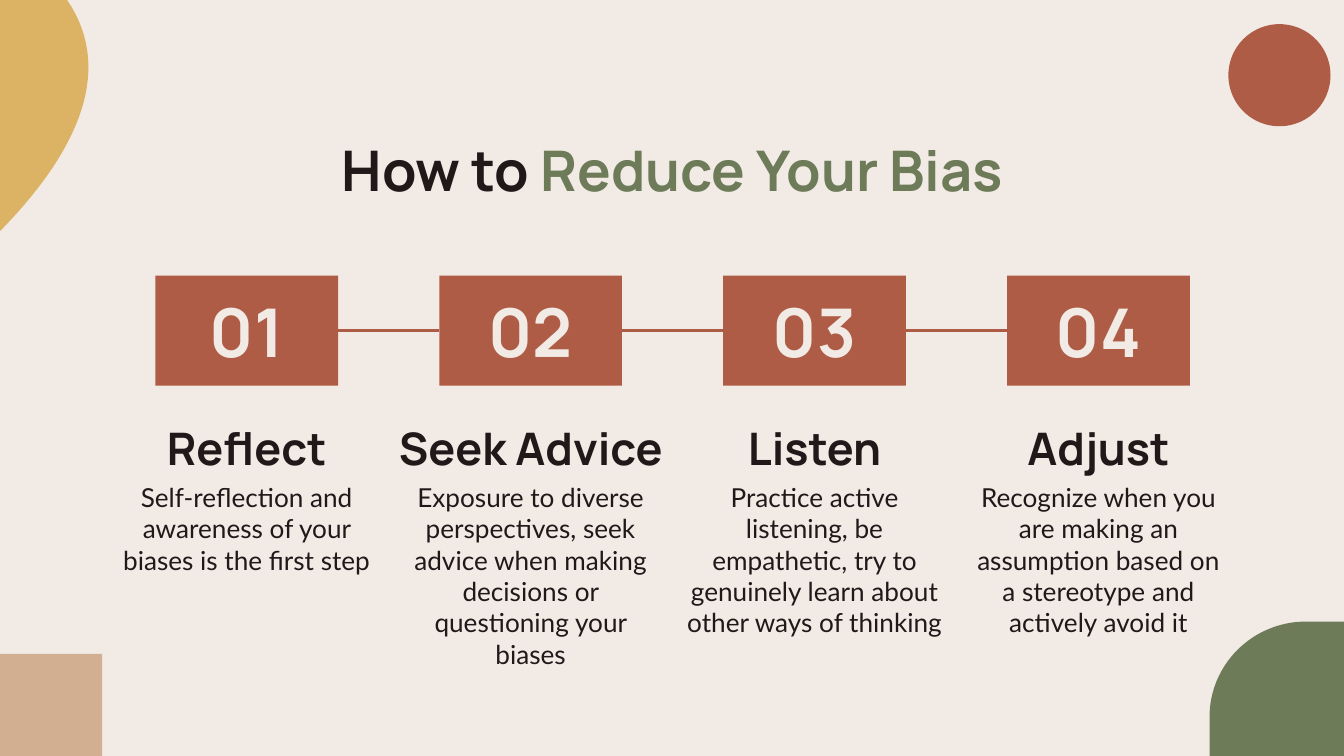
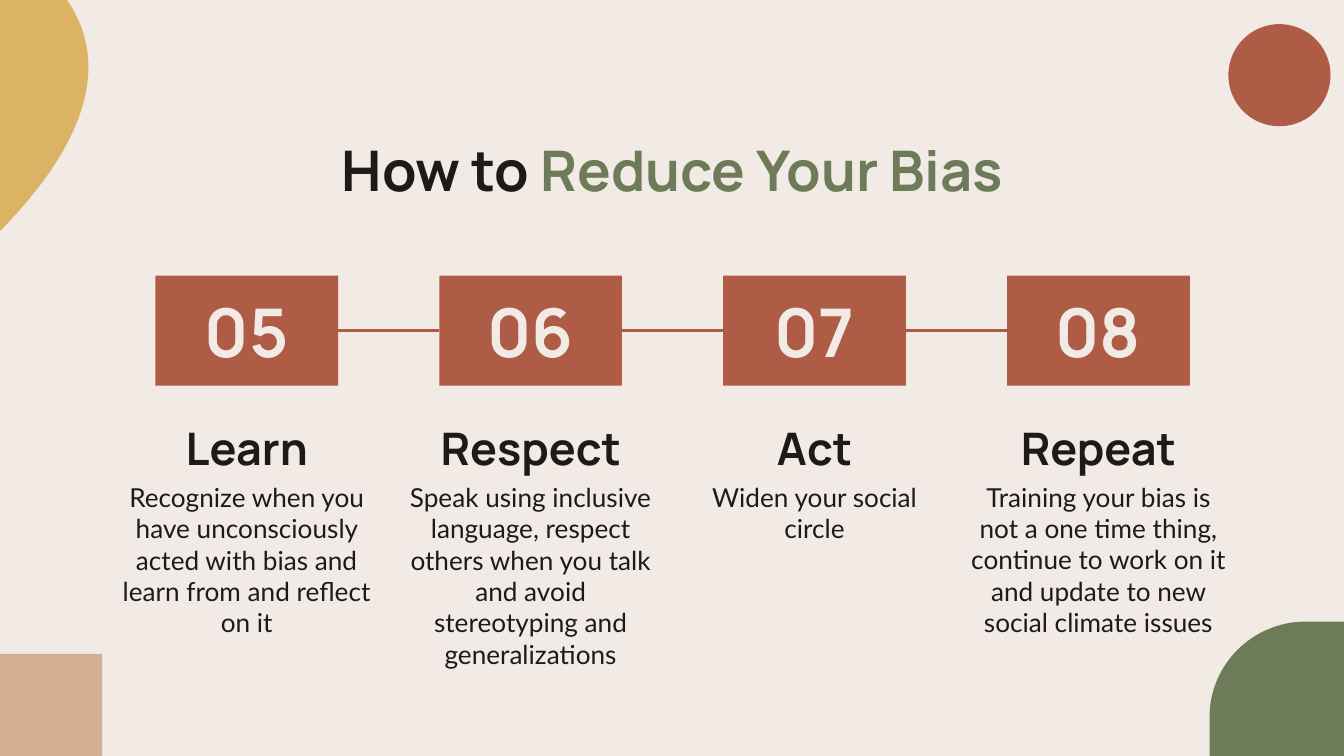
from dataclasses import dataclass

from lxml.etree import SubElement
from pptx import Presentation
from pptx.dml.color import RGBColor
from pptx.enum.shapes import MSO_CONNECTOR, MSO_SHAPE
from pptx.enum.text import MSO_ANCHOR, PP_ALIGN
from pptx.oxml.ns import qn
from pptx.util import Inches, Pt


@dataclass(frozen=True)
class Theme:
    cream: str = "F1EAE5"
    ink: str = "1F191A"
    green: str = "6E7B59"
    rust: str = "AF5C46"
    sand: str = "D3AF92"
    mustard: str = "DCB364"
    heading_font: str = "Manrope"
    body_font: str = "Lato"
    title_size: int = 30
    number_size: int = 36
    heading_size: int = 24
    body_size: int = 14
    line_width: float = 1.5


@dataclass(frozen=True)
class Box:
    left: float
    top: float
    width: float
    height: float

    def inches(self):
        return [Inches(n) for n in (self.left, self.top, self.width, self.height)]

    def point(self, x, y):
        return Inches(self.left + x * self.width), Inches(self.top + y * self.height)


@dataclass(frozen=True)
class Step:
    heading: str
    body: str
    body_height: float = 0.61


THEME = Theme()
SLIDE_WIDTH, SLIDE_HEIGHT = 10, 5.625
TITLE_BOX = Box(0.79, 0.91, 8.43, 0.52)
STEPS_BOX = Box(0.78, 2.05, 8.45, 2.47)
HEADING_WIDTHS = (2.1, 2.49, 2.1, 2.1)
TITLE_RUNS = (("How to ", THEME.ink), ("Reduce Your Bias", THEME.green))
STEP_SLIDES = (
    (
        Step("Reflect", "Self-reflection and awareness of your biases is the first step"),
        Step("Seek Advice", "Exposure to diverse perspectives, seek advice when making "
             "decisions or questioning your biases"),
        Step("Listen", "Practice active listening, be empathetic, try to genuinely "
             "learn about other ways of thinking"),
        Step("Adjust", "Recognize when you are making an assumption based on a "
             "stereotype and actively avoid it"),
    ),
    (
        Step("Learn", "Recognize when you have unconsciously acted with bias and "
             "learn from and reflect on it"),
        Step("Respect", "Speak using inclusive language, respect others when you talk "
             "and avoid stereotyping and generalizations"),
        Step("Act", "Widen your social circle"),
        Step("Repeat", "Training your bias is not a one time thing, continue to work "
             "on it and update to new social climate issues", 1.04),
    ),
)


def paint(shape, color):
    shape.shadow.inherit = False
    shape.fill.solid()
    shape.fill.fore_color.rgb = RGBColor.from_string(color)
    shape.line.fill.background()


def write(shape, runs, size, font=THEME.heading_font, bold=True, anchor=MSO_ANCHOR.TOP):
    """Fill a shape with one centred paragraph of (text, colour) runs."""
    frame = shape.text_frame
    frame.word_wrap = True
    frame.vertical_anchor = anchor
    frame.margin_left = frame.margin_right = Inches(0.1)
    frame.margin_top = frame.margin_bottom = Inches(0.1)
    paragraph = frame.paragraphs[0]
    paragraph.alignment = PP_ALIGN.CENTER
    for text, color in runs:
        run = paragraph.add_run()
        run.text = text
        run.font.name = font
        run.font.size = Pt(size)
        run.font.bold = bold
        run.font.color.rgb = RGBColor.from_string(color)


def add_block(slide, preset, box, color):
    shape = slide.shapes.add_shape(preset, *box.inches())
    paint(shape, color)
    return shape


def curve(start, control_1, control_2, end, count=32):
    """Points along a cubic curve."""
    points = []
    for index in range(count + 1):
        t = index / count
        weights = ((1 - t) ** 3, 3 * t * (1 - t) ** 2, 3 * t * t * (1 - t), t ** 3)
        points.append(tuple(
            sum(weight * value for weight, value in zip(weights, axis))
            for axis in zip(start, control_1, control_2, end)))
    return points


def add_outline(slide, box, points, color):
    first, *rest = [box.point(x, y) for x, y in points]
    builder = slide.shapes.build_freeform(*first)
    builder.add_line_segments(rest, close=True)
    paint(builder.convert_to_shape(), color)


def add_decoration(slide, box):
    # Bottom corners: rounded green block and sand square
    right, bottom = box.left + box.width, box.top + box.height
    arc = curve((0.72, 0), (0.32, 0), (0, 0.32), (0, 0.71))
    add_outline(slide, Box(right - 1, bottom - 1, 1, 1),
                arc + [(0, 1), (1, 1), (1, 0)], THEME.green)
    side = 0.76
    add_block(slide, MSO_SHAPE.RECTANGLE,
              Box(box.left, bottom - side, side, side), THEME.sand)
    # Top corners: rust circle and mustard leaf
    add_block(slide, MSO_SHAPE.OVAL,
              Box(right - 0.86, box.top + 0.18, side, side), THEME.rust)
    leaf = curve((0.5, 0), (0.88, 0.56), (0.52, 1.19), (0, 1.72))
    add_outline(slide, Box(box.left, box.top, 1, 1), leaf + [(0, 0)], THEME.mustard)


def add_title(slide, box):
    write(slide.shapes.add_textbox(*box.inches()), TITLE_RUNS, THEME.title_size)


def add_step(slide, box, number, step, heading_width):
    """Place one step in its column and return its number block."""
    center = box.left + box.width / 2

    def centered(top, width, height):
        return Box(center - width / 2, box.top + top, width, height)

    # Heading and explanation
    heading = slide.shapes.add_textbox(*centered(1.11, heading_width, 0.47).inches())
    write(heading, [(step.heading, THEME.ink)], THEME.heading_size,
          anchor=MSO_ANCHOR.BOTTOM)
    body = slide.shapes.add_textbox(*centered(1.43, 2.1, step.body_height).inches())
    write(body, [(step.body, THEME.ink)], THEME.body_size, THEME.body_font, bold=False)
    # Number block
    block = add_block(slide, MSO_SHAPE.RECTANGLE, centered(0, 1.36, 0.82), THEME.rust)
    write(block, [(f"{number:02}", THEME.cream)], THEME.number_size,
          anchor=MSO_ANCHOR.MIDDLE)
    return block


def join(slide, left_block, right_block):
    connector = slide.shapes.add_connector(MSO_CONNECTOR.STRAIGHT, 0, 0, 0, 0)
    connector.begin_connect(left_block, 3)
    connector.end_connect(right_block, 1)
    connector.line.color.rgb = RGBColor.from_string(THEME.rust)
    connector.line.width = Pt(THEME.line_width)
    SubElement(connector.element.spPr, qn("a:effectLst"))


def add_steps(slide, box, steps, first_number):
    column = box.width / len(steps)
    blocks = [
        add_step(slide, Box(box.left + index * column, box.top, column, box.height),
                 first_number + index, step, width)
        for index, (step, width) in enumerate(zip(steps, HEADING_WIDTHS))
    ]
    for left_block, right_block in zip(blocks, blocks[1:]):
        join(slide, left_block, right_block)


def add_step_slide(presentation, steps, first_number):
    slide = presentation.slides.add_slide(presentation.slide_layouts[6])
    fill = slide.background.fill
    fill.solid()
    fill.fore_color.rgb = RGBColor.from_string(THEME.cream)
    add_decoration(slide, Box(0, 0, SLIDE_WIDTH, SLIDE_HEIGHT))
    add_title(slide, TITLE_BOX)
    add_steps(slide, STEPS_BOX, steps, first_number)


def main():
    presentation = Presentation()
    presentation.slide_width = Inches(SLIDE_WIDTH)
    presentation.slide_height = Inches(SLIDE_HEIGHT)
    first_number = 1
    for steps in STEP_SLIDES:
        add_step_slide(presentation, steps, first_number)
        first_number += len(steps)
    presentation.save("out.pptx")


if __name__ == "__main__":
    main()
